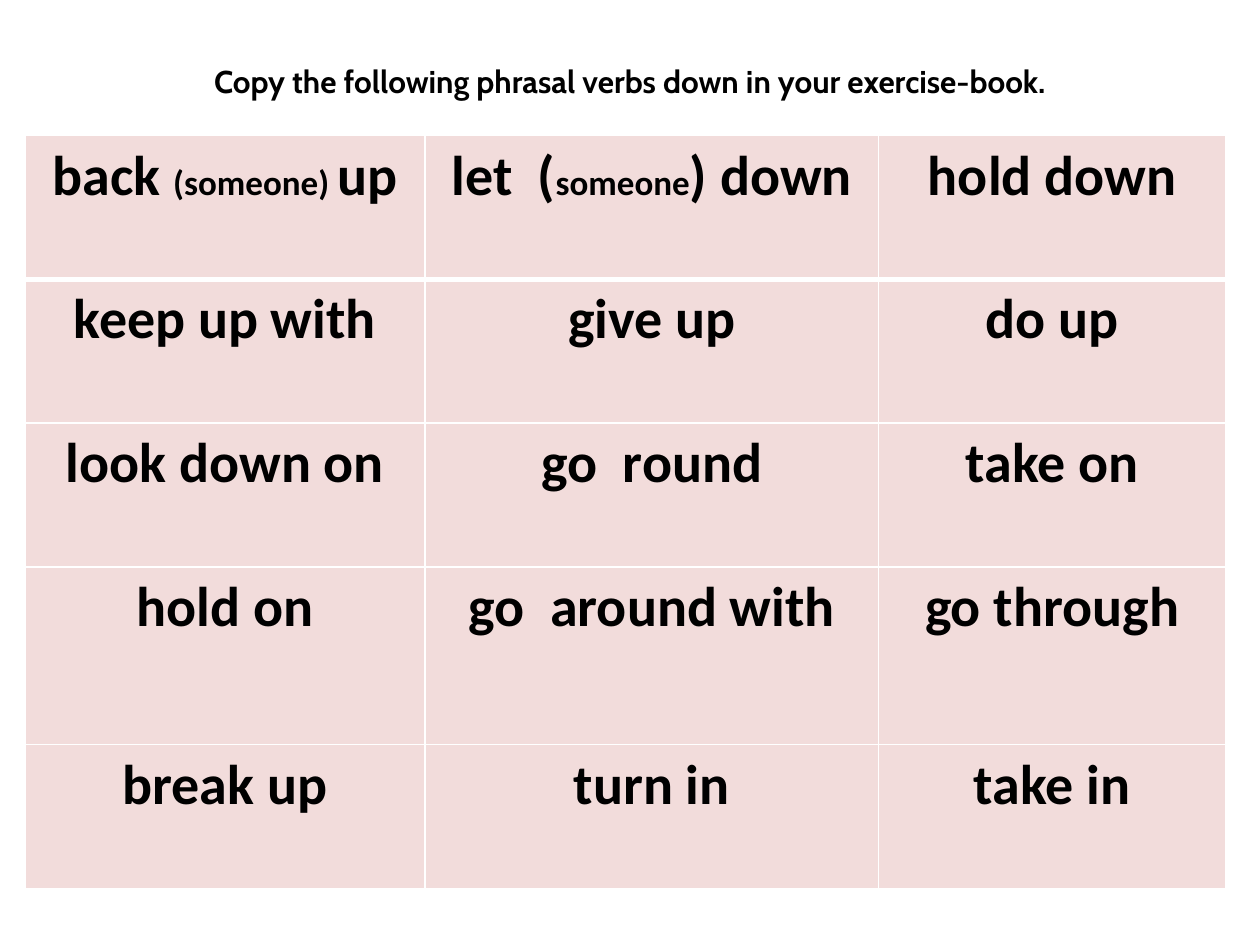
from lxml.etree import SubElement
from pptx import Presentation
from pptx.dml.color import RGBColor
from pptx.enum.text import MSO_ANCHOR as Anchor, MSO_AUTO_SIZE as AutoSize, PP_ALIGN as Align
from pptx.oxml.ns import qn
from pptx.util import Pt

BLACK = RGBColor(0x00, 0x00, 0x00)
WHITE = RGBColor(0xFF, 0xFF, 0xFF)
PINK = RGBColor(0xF2, 0xDC, 0xDB)

TITLE = "Copy the following phrasal verbs down in your exercise-book."
NOTE = "someone"
PHRASAL_VERBS = [
    [["back ", f"({NOTE}) ", "up"], ["let  (", NOTE, ") down"], ["hold down"]],
    [["keep up with"], ["give up"], ["do up"]],
    [["look down on"], ["go  round"], ["take on"]],
    [["hold on"], ["go  around with"], ["go through"]],
    [["break up"], ["turn in"], ["take in"]],
]
COLUMN_WIDTHS = [228.7, 259.2, 198.4]
ROW_HEIGHTS = [82.2, 82.2, 82.2, 101.5, 82.2]


class SlideBuilder:
    title_font = "Cabin"
    table_font = "Calibri"
    title_size = 18
    verb_size = 32
    note_size = 20
    thin_border = 1
    header_border = 3

    def __init__(self, slide):
        self.slide = slide

    def style(self, paragraph, font_name, size):
        paragraph.alignment = Align.CENTER
        font = paragraph.font
        font.name = font_name
        font.size = Pt(size)
        font.bold = True
        font.color.rgb = BLACK

    def title(self, text, left, top, width, height):
        shape = self.slide.shapes.title
        shape.left, shape.top, shape.width, shape.height = map(Pt, (left, top, width, height))
        frame = shape.text_frame
        frame.text = text
        frame.word_wrap = True
        frame.auto_size = AutoSize.NONE
        frame.vertical_anchor = Anchor.MIDDLE
        self.style(frame.paragraphs[0], self.title_font, self.title_size)

    def border(self, cell, side, width):
        properties = cell._tc.get_or_add_tcPr()
        line = SubElement(properties, qn(f"a:ln{side}"), w=str(Pt(width)))
        fill = SubElement(line, qn("a:solidFill"))
        SubElement(fill, qn("a:srgbClr"), val=str(WHITE))

    def cell(self, cell, parts, top_border, bottom_border):
        paragraph = cell.text_frame.paragraphs[0]
        self.style(paragraph, self.table_font, self.verb_size)
        for part in parts:
            run = paragraph.add_run()
            run.text = part
            if NOTE in part:
                run.font.size = Pt(self.note_size)
        self.border(cell, "L", self.thin_border)
        self.border(cell, "R", self.thin_border)
        self.border(cell, "T", top_border)
        self.border(cell, "B", bottom_border)
        cell.fill.solid()
        cell.fill.fore_color.rgb = PINK

    def table(self, rows, left, top, widths, heights):
        frame = self.slide.shapes.add_table(
            len(heights), len(widths), Pt(left), Pt(top), Pt(sum(widths)), Pt(sum(heights))
        )
        table = frame.table
        for column, width in zip(table.columns, widths):
            column.width = Pt(width)
        for row, height in zip(table.rows, heights):
            row.height = Pt(height)
        for row_index, row in enumerate(rows):
            top_border = self.header_border if row_index == 1 else self.thin_border
            bottom_border = self.header_border if row_index == 0 else self.thin_border
            for column_index, parts in enumerate(row):
                self.cell(table.cell(row_index, column_index), parts, top_border, bottom_border)


def main():
    presentation = Presentation()
    presentation.slide_width = Pt(720)
    presentation.slide_height = Pt(540)
    title_only = presentation.slide_layouts[5]
    builder = SlideBuilder(presentation.slides.add_slide(title_only))
    builder.title(TITLE, 42.5, 31.7, 635, 29)
    builder.table(PHRASAL_VERBS, 14.2, 77.4, COLUMN_WIDTHS, ROW_HEIGHTS)
    presentation.save("out.pptx")


if __name__ == "__main__":
    main()
